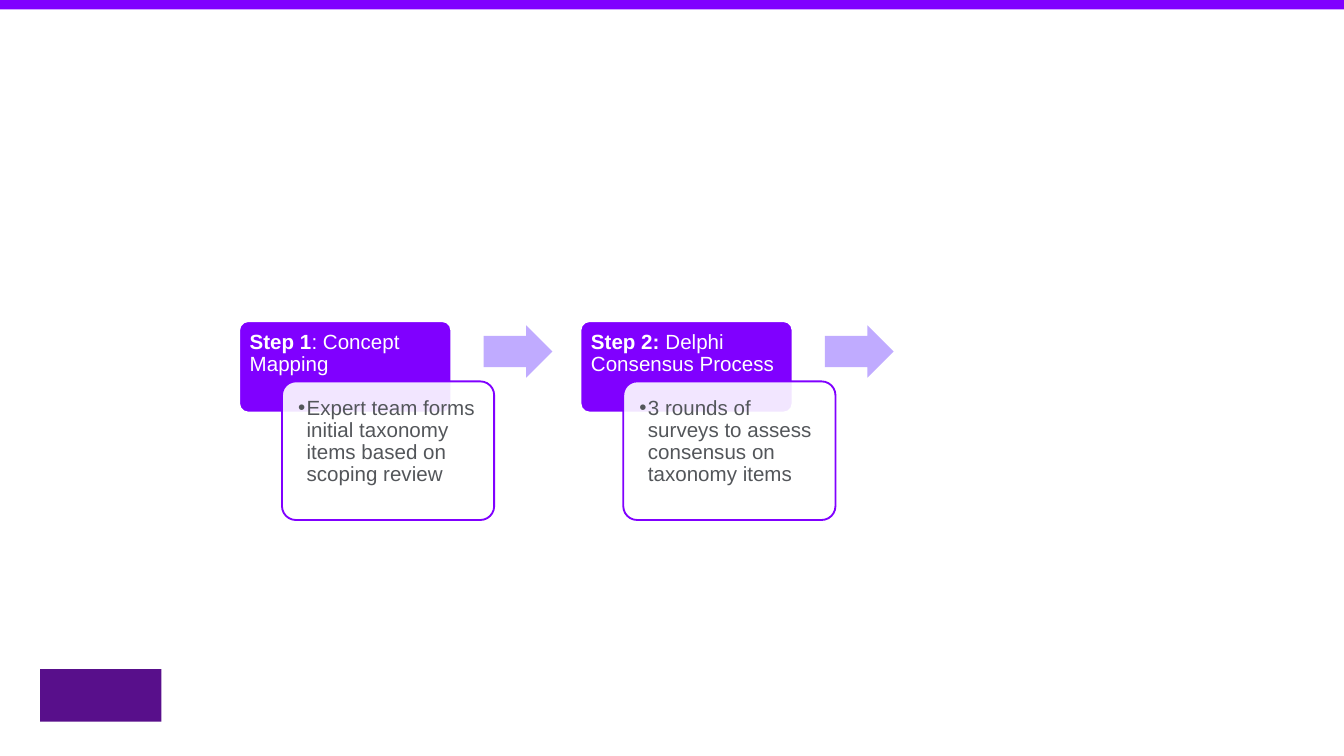
from dataclasses import dataclass

from lxml.etree import SubElement
from pptx import Presentation
from pptx.dml.color import RGBColor
from pptx.enum.shapes import MSO_SHAPE
from pptx.enum.text import MSO_ANCHOR, PP_ALIGN
from pptx.oxml.ns import qn
from pptx.util import Cm, Pt


@dataclass(frozen=True)
class Theme:
    violet: RGBColor = RGBColor.from_string("8000FF")
    lilac: RGBColor = RGBColor.from_string("C0ABFF")
    plum: RGBColor = RGBColor.from_string("580F8B")
    white: RGBColor = RGBColor.from_string("FFFFFF")
    gray: RGBColor = RGBColor.from_string("53565A")
    font: str = "Arial"
    size: Pt = Pt(11)
    outline: Pt = Pt(1)


theme = Theme()


def add_block(kind, left, top, width, height, fill, line=None, adjustments=()):
    block = slide.shapes.add_shape(kind, Cm(left), Cm(top), Cm(width), Cm(height))
    block.shadow.inherit = False
    block.fill.solid()
    block.fill.fore_color.rgb = fill
    if line is None:
        block.line.fill.background()
    else:
        block.line.color.rgb = line
        block.line.width = theme.outline
    for index, value in enumerate(adjustments):
        block.adjustments[index] = value
    return block


def write(block, text, color, inset, lead="", bullet=False):
    frame = block.text_frame
    frame.word_wrap = True
    frame.vertical_anchor = MSO_ANCHOR.TOP
    frame.margin_left = frame.margin_right = Cm(inset)
    frame.margin_top = frame.margin_bottom = Cm(inset)
    paragraph = frame.paragraphs[0]
    paragraph.alignment = PP_ALIGN.LEFT
    paragraph.line_spacing = 0.9
    if bullet:
        properties = paragraph._p.get_or_add_pPr()
        properties.set("marL", str(Cm(0.16)))
        properties.set("indent", str(-Cm(0.16)))
        SubElement(properties, qn("a:buFont"), typeface=theme.font)
        SubElement(properties, qn("a:buChar"), char="•")
    for words, bold in ((lead, True), (text, False)):
        if words:
            run = paragraph.add_run()
            run.text = words
            run.font.name = theme.font
            run.font.size = theme.size
            run.font.bold = bold
            run.font.color.rgb = color


presentation = Presentation()
presentation.slide_width = Cm(25.4)
presentation.slide_height = Cm(14.29)
slide = presentation.slides.add_slide(presentation.slide_layouts[6])

add_block(MSO_SHAPE.RECTANGLE, 0, 0, 25.4, 0.18, theme.violet)
add_block(MSO_SHAPE.RECTANGLE, 0.76, 12.65, 2.29, 0.99, theme.plum)

steps = [
    ("Step 1", ": Concept Mapping",
     "Expert team forms initial taxonomy items based on scoping review"),
    ("Step 2: ", "Delphi Consensus Process",
     "3 rounds of surveys to assess consensus on taxonomy items"),
]
first_left, top, pitch, width = 4.52, 6.07, 6.45, 4.01

for position, (label, title, detail) in enumerate(steps):
    left = first_left + position * pitch
    heading = add_block(MSO_SHAPE.ROUNDED_RECTANGLE, left, top, width, 1.73,
                        theme.violet, line=theme.white, adjustments=[0.1])
    write(heading, title, theme.white, inset=0.15, lead=label)

    card = add_block(MSO_SHAPE.ROUNDED_RECTANGLE, left + 0.81, top + 1.14, width, 2.62,
                     theme.white, line=theme.violet, adjustments=[0.1])
    card_color = card._element.spPr.find(qn("a:solidFill")).find(qn("a:srgbClr"))
    SubElement(card_color, qn("a:alpha"), val="90000")
    write(card, detail, theme.gray, inset=0.23, bullet=True)

    add_block(MSO_SHAPE.RIGHT_ARROW, left + 4.62, top + 0.08, 1.3, 0.99,
              theme.lilac, adjustments=[0.6, 0.5])

presentation.save("out.pptx")
